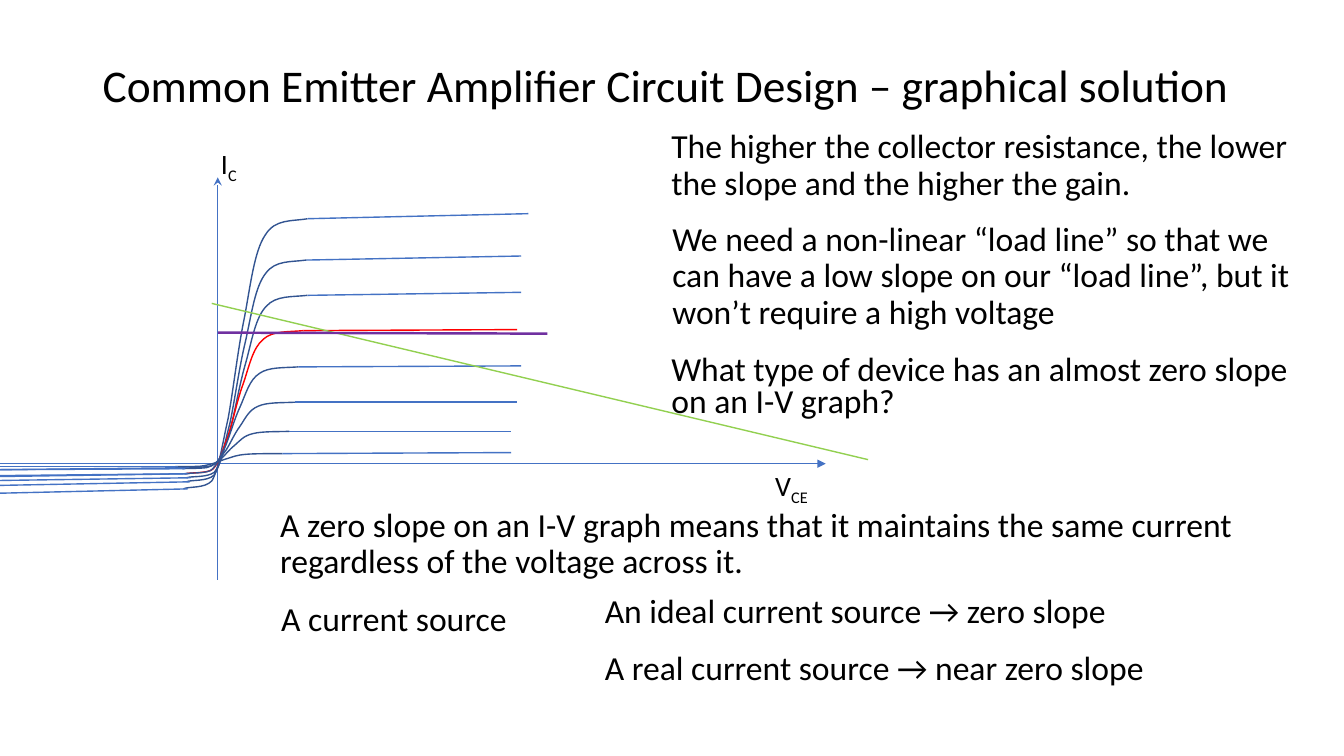
from lxml import etree
from pptx import Presentation
from pptx.dml.color import RGBColor
from pptx.enum.shapes import MSO_CONNECTOR
from pptx.enum.text import MSO_ANCHOR, PP_ALIGN
from pptx.oxml.ns import qn
from pptx.util import Emu, Pt

STRAIGHT = MSO_CONNECTOR.STRAIGHT
TOP, MIDDLE = MSO_ANCHOR.TOP, MSO_ANCHOR.MIDDLE
LEFT, CENTER = PP_ALIGN.LEFT, PP_ALIGN.CENTER

PX = 9144
BLACK = RGBColor(0x00, 0x00, 0x00)
BLUE = RGBColor(0x44, 0x72, 0xC4)
NAVY = RGBColor(0x32, 0x54, 0x91)
RED = RGBColor(0xFF, 0x00, 0x00)
GREEN = RGBColor(0x92, 0xD0, 0x50)
PURPLE = RGBColor(0x70, 0x30, 0xA0)
FONT = "Calibri"
SUBSCRIPT = "-25000"

KNEE = [
    (1, 0),
    (0.87, 0.01), (0.74, 0), (0.66, 0.06),
    (0.57, 0.12), (0.54, 0.25), (0.49, 0.37),
    (0.44, 0.48), (0.4, 0.64), (0.36, 0.74),
    (0.31, 0.84), (0.29, 0.92), (0.23, 0.97),
    (0.17, 1), (0.04, 0.99), (0, 1),
]

CHARACTERISTICS = [
    ((182, 305), (217, 485), (524, 212), (-31, 490), 186, NAVY, BLUE),
    ((185, 304), (258, 478), (517, 254), (-23, 482), 188, NAVY, BLUE),
    ((185, 305), (293, 474), (517, 290), (-22, 477), 189, NAVY, BLUE),
    ((184, 301), (328, 470), (513, 327), (-17, 473), 188, RED, RED),
    ((183, 296), (364, 470), (517, 363), (-15, 472), 186, NAVY, BLUE),
    ((185, 293), (399, 464), (513, 399), (-3, 466), 188, NAVY, BLUE),
    ((181, 287), (428, 465), (507, 428), (-2, 466), 184, NAVY, BLUE),
    ((174, 280), (450, 463), (507, 449), (-9, 463), 177, NAVY, BLUE),
]

STATEMENTS = [
    ((656, 124, 633, 106), 0.9,
     "The higher the collector resistance, the lower the slope and the higher the gain."),
    ((657, 216, 633, 129), 0.9,
     "We need a non-linear “load line” so that we can have a low slope on our "
     "“load line”, but it won’t require a high voltage"),
    ((656, 348, 633, 81), 0.8,
     "What type of device has an almost zero slope on an I-V graph?"),
    ((268, 499, 1033, 98), 0.9,
     "A zero slope on an I-V graph means that it maintains the same current "
     "regardless of the voltage across it."),
    ((269, 593, 268, 51), 0.9, "A current source"),
    ((590, 585, 660, 51), 0.9, "An ideal current source → zero slope"),
    ((590, 641, 660, 51), 0.9, "A real current source → near zero slope"),
]


def px(length):
    return Emu(round(length * PX))


def add_text(shapes, box, runs, size, spacing=0.9, before=10, align=LEFT, anchor=TOP):
    frame = shapes.add_textbox(*map(px, box)).text_frame
    frame.word_wrap = True
    frame.vertical_anchor = anchor
    paragraph = frame.paragraphs[0]
    paragraph.alignment = align
    paragraph.line_spacing = spacing
    paragraph.space_before = Pt(before)
    for words, baseline in runs:
        run = paragraph.add_run()
        run.text = words
        run.font.name = FONT
        run.font.size = Pt(size)
        run.font.color.rgb = BLACK
        if baseline:
            run._r.get_or_add_rPr().set("baseline", baseline)


def add_line(shapes, start, end, color, width, head=None, tail=None):
    line = shapes.add_connector(STRAIGHT, *map(px, start + end))
    line.line.color.rgb = color
    line.line.width = Pt(width)
    outline = line.line._get_or_add_ln()
    for tag, arrow in (("a:headEnd", head), ("a:tailEnd", tail)):
        if arrow:
            etree.SubElement(outline, qn(tag)).set("type", arrow)
    etree.SubElement(line._element.spPr, qn("a:effectLst"))


def bend_segments(outline):
    segments = list(outline._element.iter(qn("a:lnTo")))
    for first in range(0, len(segments), 3):
        curve = etree.SubElement(segments[first].getparent(), qn("a:cubicBezTo"))
        for segment in segments[first:first + 3]:
            curve.append(segment[0])
            segment.getparent().remove(segment)


def add_knee(shapes, span, rise, color):
    (left, right), (top, bottom) = span, rise
    start, *controls = [
        (px(left + x * (right - left)), px(top + y * (bottom - top))) for x, y in KNEE
    ]
    builder = shapes.build_freeform(*start, scale=1.0)
    builder.add_line_segments(controls, close=False)
    knee = builder.convert_to_shape()
    bend_segments(knee)
    knee.fill.background()
    knee.line.color.rgb = color
    knee.line.width = Pt(1)
    knee.shadow.inherit = False


def add_characteristic(shapes, span, rise, plateau_end, reverse_end, reverse_start,
                       knee_color, plateau_color):
    add_knee(shapes, span, rise, knee_color)
    add_line(shapes, (span[1], rise[0]), plateau_end, plateau_color, 1)
    add_line(shapes, reverse_end, (reverse_start, rise[1]), BLUE, 1)


def add_graph(shapes):
    add_line(shapes, (216, 176), (216, 575), BLUE, 0.5, head="stealth")
    add_line(shapes, (-41, 460), (819, 460), BLUE, 0.5, tail="triangle")
    add_text(shapes, (199, 141, 56, 47), [("I", None), ("C", SUBSCRIPT)], 20, align=CENTER)
    add_text(shapes, (744, 460, 82, 69), [("V", None), ("CE", SUBSCRIPT)], 20, align=CENTER)
    for characteristic in CHARACTERISTICS:
        add_characteristic(shapes, *characteristic)


def main():
    deck = Presentation()
    deck.slide_width, deck.slide_height = px(1333), px(750)
    shapes = deck.slides.add_slide(deck.slide_layouts[6]).shapes
    add_text(shapes, (92, 40, 1150, 95),
             [("Common Emitter Amplifier Circuit Design – graphical solution", None)],
             32.4, before=0, anchor=MIDDLE)
    add_graph(shapes.add_group_shape().shapes)
    add_line(shapes, (210, 301), (861, 456), GREEN, 1)
    add_line(shapes, (216, 330), (543, 331), PURPLE, 1.75)
    for box, spacing, words in STATEMENTS:
        add_text(shapes, box, [(words, None)], 24, spacing)
    deck.save("out.pptx")


if __name__ == "__main__":
    main()
